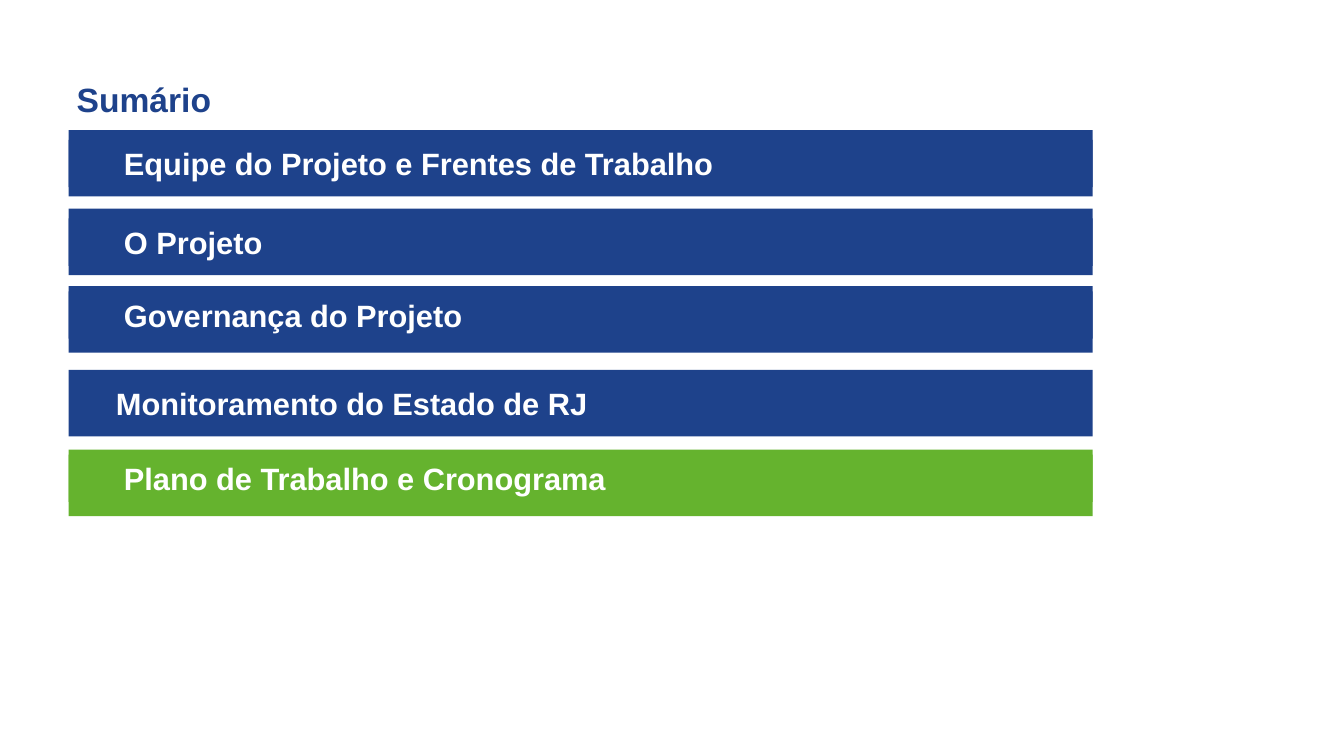
import pptx
import pptx.util
import pptx.dml.color
import pptx.enum.shapes
import pptx.enum.text

THEME = {
    "blue": pptx.dml.color.RGBColor.from_string("1E428B"),
    "green": pptx.dml.color.RGBColor.from_string("65B32E"),
    "white": pptx.dml.color.RGBColor.from_string("FFFFFF"),
    "font": "Arial",
    "title_size": pptx.util.Pt(24),
    "label_size": pptx.util.Pt(22),
}
INSET = pptx.util.Inches(0.05)

deck = pptx.Presentation()
deck.slide_width = pptx.util.Inches(13.33)
deck.slide_height = pptx.util.Inches(7.5)
page = deck.slides.add_slide(deck.slide_layouts[6])


def add_bar(shapes, left, top, width, height, color):
    """Add a borderless rectangle placed in percent of the slide; no color means no fill."""
    bar = shapes.add_shape(
        pptx.enum.shapes.MSO_SHAPE.RECTANGLE,
        int(deck.slide_width * left / 100), int(deck.slide_height * top / 100),
        int(deck.slide_width * width / 100), int(deck.slide_height * height / 100))
    bar.shadow.inherit = False
    bar.line.fill.background()
    if color is None:
        bar.fill.background()
    else:
        bar.fill.solid()
        bar.fill.fore_color.rgb = color
    return bar


def write_heading(box, text, size, color, margin, indent):
    """Write one bold left-aligned line; margin and first-line indent are in inches."""
    frame_format = {
        "word_wrap": True,
        "vertical_anchor": pptx.enum.text.MSO_ANCHOR.MIDDLE,
        "margin_left": INSET, "margin_top": INSET,
        "margin_right": INSET, "margin_bottom": INSET,
    }
    for name, value in frame_format.items():
        setattr(box.text_frame, name, value)
    para = box.text_frame.paragraphs[0]
    para.level = 1
    para.alignment = pptx.enum.text.PP_ALIGN.LEFT
    properties = para._p.get_or_add_pPr()
    properties.set("marL", str(pptx.util.Inches(margin)))
    properties.set("indent", str(pptx.util.Inches(indent)))
    span = para.add_run()
    span.text = text
    for name, value in {"name": THEME["font"], "size": size, "bold": True}.items():
        setattr(span.font, name, value)
    span.font.color.rgb = color


# Places are percent of the slide
BAR_LEFT, BAR_WIDTH, BAR_HEIGHT, LABEL_HEIGHT = 5.1, 76.2, 8.8, 6.27

title = add_bar(page.shapes, 1.58, 9.73, BAR_WIDTH, 6.67, None)
write_heading(title, "Sumário", THEME["title_size"], THEME["blue"], 0, 0.5)

# text, bar top, label drop below bar top, label left, bar color, label fill
topics = [
    ("Equipe do Projeto e Frentes de Trabalho", 17.2, 1.3, BAR_LEFT, "blue", "blue"),
    ("O Projeto", 27.6, 1.3, BAR_LEFT, "blue", "blue"),
    ("Governança do Projeto", 37.87, 0.67, BAR_LEFT, "blue", "blue"),
    ("Monitoramento do Estado de RJ", 48.93, 1.3, 4.5, "blue", None),
    ("Plano de Trabalho e Cronograma", 59.47, 0.67, BAR_LEFT, "green", "green"),
]
for text, top, drop, label_left, bar_color, label_fill in topics:
    row = page.shapes.add_group_shape()
    add_bar(row.shapes, BAR_LEFT, top, BAR_WIDTH, BAR_HEIGHT, THEME[bar_color])
    label = add_bar(row.shapes, label_left, top + drop, BAR_WIDTH, LABEL_HEIGHT,
                    THEME.get(label_fill))
    write_heading(label, text, THEME["label_size"], THEME["white"], 0.29, 0.21)

deck.save("out.pptx")
